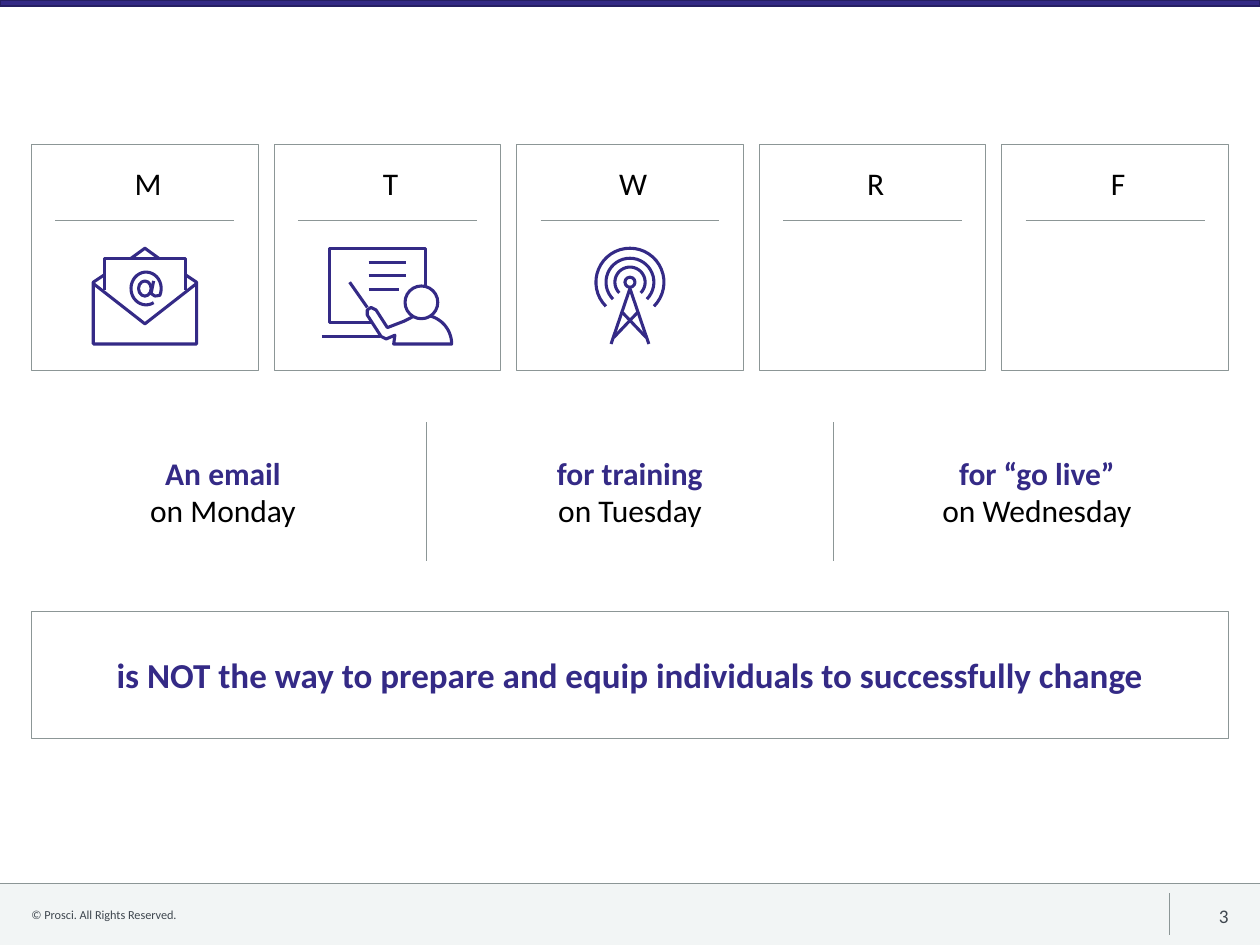
from math import cos, radians, sin

from lxml.etree import SubElement
from pptx import Presentation
from pptx.dml.color import RGBColor
from pptx.enum.shapes import MSO_CONNECTOR, MSO_SHAPE
from pptx.enum.text import MSO_ANCHOR, PP_ALIGN
from pptx.oxml.ns import qn
from pptx.util import Inches, Pt

PURPLE, GREY, BLACK, SLATE = "342A86", "8C9696", "000000", "3F474F"
ICON_PT = 1.75


def rgb(value):
    """Turn a hex string into a colour."""
    return RGBColor.from_string(value)


def style(sp, fill=None, line=None, width=0.5):
    """Set fill and outline and drop the shadow."""
    sp.shadow.inherit = False
    if fill:
        sp.fill.solid()
        sp.fill.fore_color.rgb = rgb(fill)
    else:
        sp.fill.background()
    if line:
        sp.line.color.rgb = rgb(line)
        sp.line.width = Pt(width)
    else:
        sp.line.fill.background()
    return sp


def add_box(s, x, y, w, h, kind=MSO_SHAPE.RECTANGLE, **look):
    """Add a preset shape."""
    sp = s.shapes.add_shape(kind, Inches(x), Inches(y), Inches(w), Inches(h))
    return style(sp, **look)


def add_line(s, x1, y1, x2, y2, color=GREY, width=0.5):
    """Add a straight line."""
    c = s.shapes.add_connector(MSO_CONNECTOR.STRAIGHT, Inches(x1), Inches(y1), Inches(x2), Inches(y2))
    c.line.color.rgb = rgb(color)
    c.line.width = Pt(width)
    SubElement(c._element.spPr, qn("a:effectLst"))


def set_text(sp, runs, size, align=PP_ALIGN.CENTER, insets=(0.1, 0.05, 0.1, 0.05)):
    """Write runs of (text, colour, bold), one on each line."""
    tf = sp.text_frame
    tf.word_wrap = True
    tf.vertical_anchor = MSO_ANCHOR.MIDDLE
    tf.margin_left, tf.margin_top, tf.margin_right, tf.margin_bottom = map(Inches, insets)
    p = tf.paragraphs[0]
    p.alignment = align
    for i, (text, color, bold) in enumerate(runs):
        if i:
            p.add_line_break()
        r = p.add_run()
        r.text = text
        r.font.name, r.font.size, r.font.bold = "Calibri", Pt(size), bold
        r.font.color.rgb = rgb(color)


def add_text(s, x, y, w, h, runs, size, **layout):
    """Add a text box."""
    sp = s.shapes.add_textbox(Inches(x), Inches(y), Inches(w), Inches(h))
    set_text(sp, runs, size, **layout)


def arc(cx, cy, rx, ry, start, end):
    """Return points along an elliptical arc, in degrees."""
    steps = 32
    angles = [radians(start + (end - start) * i / steps) for i in range(steps + 1)]
    return [(cx + rx * cos(a), cy + ry * sin(a)) for a in angles]


def stroke(s, x, y, points, close=False):
    """Draw an icon outline from points relative to x, y."""
    pts = [(Inches(x + px), Inches(y + py)) for px, py in points]
    fb = s.shapes.build_freeform(*pts[0])
    fb.add_line_segments(pts[1:], close=close)
    style(fb.convert_to_shape(), line=PURPLE, width=ICON_PT)


def ring(s, cx, cy, rx, ry):
    """Draw an outlined icon oval around a centre."""
    add_box(s, cx - rx, cy - ry, 2 * rx, 2 * ry, MSO_SHAPE.OVAL, line=PURPLE, width=ICON_PT)


def email_icon(s, x, y):
    """Draw an open envelope with an at sign."""
    stroke(s, x, y, [(0.58, 1.03), (0.49, 1.09), (0.49, 1.58), (1.31, 1.58), (1.31, 1.09), (1.22, 1.03)])
    stroke(s, x, y, [(0.49, 1.1), (0.9, 1.42), (1.31, 1.1)])
    stroke(s, x, y, [(0.58, 1.15), (0.58, 0.9), (1.22, 0.9), (1.22, 1.15)])
    stroke(s, x, y, [(0.79, 0.9), (0.9, 0.82), (1.01, 0.9)])
    ring(s, x + 0.9, y + 1.14, 0.05, 0.06)
    stroke(s, x, y, [(0.97, 1.08), (0.95, 1.18), (0.98, 1.2)] + arc(0.91, 1.14, 0.12, 0.13, 25, -300))


def training_icon(s, x, y):
    """Draw a trainer pointing at a board."""
    stroke(s, x, y, [(0.78, 1.41), (0.44, 1.41), (0.44, 0.82), (1.2, 0.82), (1.2, 1.13)])
    lines = [(0.75, 0.93, 1.05, 0.93), (0.75, 1.04, 1.05, 1.04), (0.75, 1.15, 0.99, 1.15),
             (0.38, 1.52, 0.84, 1.52), (0.6, 1.09, 0.74, 1.29)]
    for x1, y1, x2, y2 in lines:
        add_line(s, x + x1, y + y1, x + x2, y + y2, PURPLE, ICON_PT)
    ring(s, x + 1.17, y + 1.25, 0.13, 0.13)
    arm = [(0.95, 1.58), (0.96, 1.51), (0.89, 1.54), (0.85, 1.52), (0.74, 1.35), (0.74, 1.31),
           (0.77, 1.29), (0.81, 1.31), (0.9, 1.45), (1.03, 1.4), (1.11, 1.36)]
    stroke(s, x, y, arc(1.18, 1.58, 0.23, 0.23, -74, 0) + arm)


def broadcast_icon(s, x, y):
    """Draw a radio mast with signal waves."""
    cx, cy = 0.9, 1.09
    ring(s, x + cx, y + cy, 0.04, 0.04)
    for radius in (0.12, 0.19, 0.27):
        stroke(s, x, y, arc(cx, cy, radius, radius, 135, 405))
    stroke(s, x, y, [(cx - 0.15, 1.58), (cx, 1.14), (cx + 0.15, 1.58)])
    for side in (-1, 1):
        add_line(s, x + cx + side * 0.13, y + 1.53, x + cx - side * 0.06, y + 1.33, PURPLE, ICON_PT)


def day_card(s, x, y, w, h, day, icon):
    """Place a weekday card with its rule and icon."""
    add_box(s, x, y, w, h, line=GREY)
    add_text(s, x, y + 0.1, w, 0.4, [(day, BLACK, False)], 18, insets=(0.05, 0.05, 0, 0.05))
    add_line(s, x + 0.19, y + 0.6, x + w - 0.19, y + 0.6)
    if icon:
        icon(s, x, y)


def week(s, x, y, w, h):
    """Place five equal day cards across the box."""
    days = [("M", email_icon), ("T", training_icon), ("W", broadcast_icon), ("R", None), ("F", None)]
    card_w = 1.8
    pitch = (w - card_w) / (len(days) - 1)
    for i, (day, icon) in enumerate(days):
        day_card(s, x + i * pitch, y, card_w, h, day, icon)


def steps(s, x, y, w, h):
    """Place three captions with dividers between them."""
    captions = [("An email", "on Monday"), ("for training", "on Tuesday"), ("for “go live”", "on Wednesday")]
    text_w, text_h = 2.66, 0.71
    pitch = (w - text_w) / (len(captions) - 1)
    for i, (what, when) in enumerate(captions):
        left = x + i * pitch
        runs = [(what, PURPLE, True), (when, BLACK, False)]
        add_text(s, left, y + (h - text_h) / 2, text_w, text_h, runs, 18)
        if i:
            divider = left - (pitch - text_w) / 2
            add_line(s, divider, y, divider, y + h)


def conclusion(s, x, y, w, h):
    """Place the framed closing statement."""
    text = "is NOT the way to prepare and equip individuals to successfully change"
    set_text(add_box(s, x, y, w, h, line=GREY), [(text, PURPLE, True)], 20)


def frame(s, w, h):
    """Place the top bar and the footer."""
    top = 7.01
    add_box(s, 0, top, w, h - top, fill="F2F5F5")
    add_box(s, 0, 0, w, 0.05, fill=PURPLE, line="261F63", width=1)
    add_line(s, 0, top, w, top)
    add_line(s, 9.28, 7.09, 9.28, 7.42)
    add_text(s, 0.25, 7.15, 7.34, 0.22, [("© Prosci. All Rights Reserved.", SLATE, False)], 7,
             align=PP_ALIGN.LEFT, insets=(0, 0.05, 0.1, 0.05))
    add_text(s, 9.26, 7.16, 0.49, 0.21, [("3", SLATE, False)], 11, align=PP_ALIGN.RIGHT, insets=(0, 0, 0, 0))


def main():
    """Build and save the slide."""
    prs = Presentation()
    prs.slide_width, prs.slide_height = Inches(10), Inches(7.5)
    s = prs.slides.add_slide(prs.slide_layouts[6])
    frame(s, 10, 7.5)
    steps(s, 0.44, 3.35, 9.12, 1.1)
    conclusion(s, 0.25, 4.85, 9.5, 1.01)
    week(s, 0.25, 1.15, 9.5, 1.79)
    prs.save("out.pptx")


if __name__ == "__main__":
    main()
